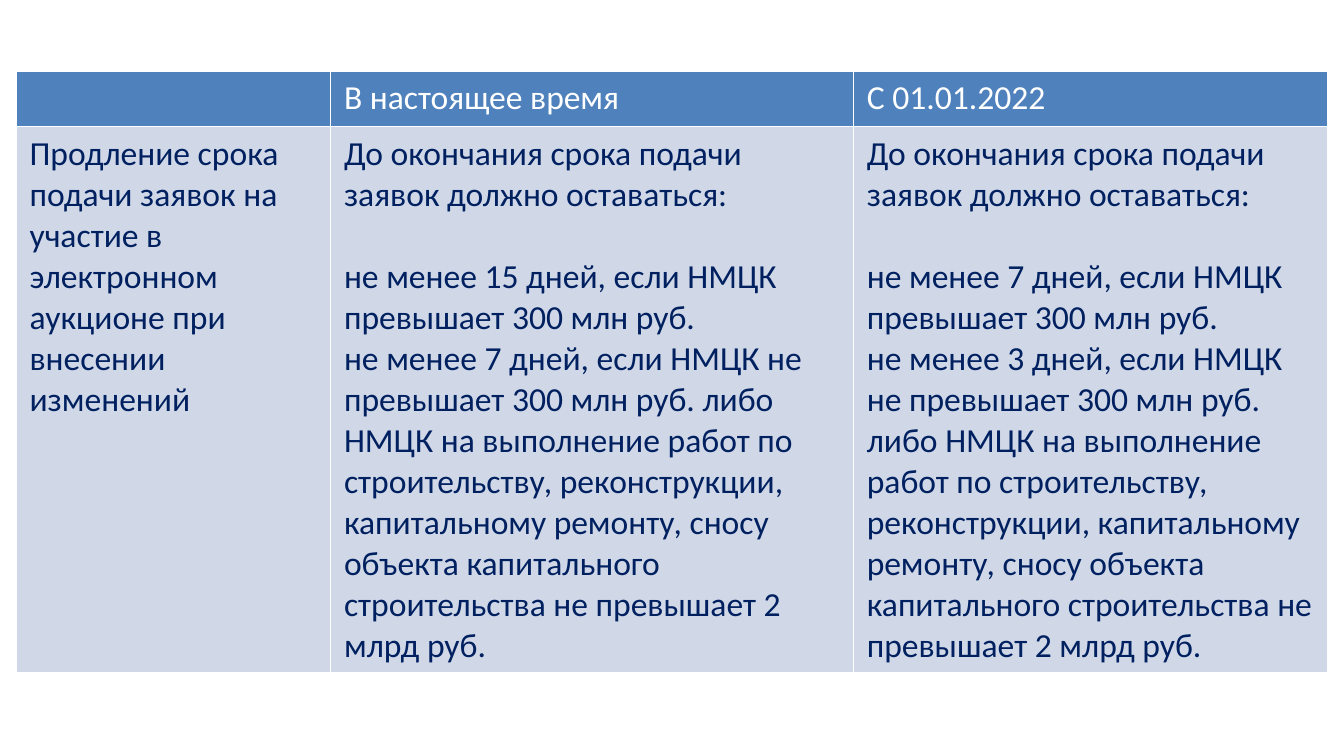
from dataclasses import dataclass

from lxml import etree
from pptx import Presentation
from pptx.dml.color import RGBColor
from pptx.oxml.ns import qn
from pptx.util import Inches, Pt


@dataclass(frozen=True)
class Theme:
    font: str = "Calibri"
    size: int = 18
    line_height: int = 22
    border_width: int = 1
    header_fill: str = "4F81BD"
    header_text: str = "FFFFFF"
    body_fill: str = "D0D8E8"
    body_text: str = "002060"
    border: str = "FFFFFF"


THEME = Theme()
COLUMN_WIDTHS = (2.34, 3.89, 3.53)
ROW_HEIGHTS = (0.41, 4)


def deadline_rules(large_days, small_days):
    """Text of a deadline cell for the two price thresholds."""
    return "\n".join((
        "До окончания срока подачи заявок должно оставаться:",
        f"не менее {large_days} дней, если НМЦК превышает 300 млн руб.",
        f"не менее {small_days} дней, если НМЦК не превышает 300 млн руб. либо "
        "НМЦК на выполнение работ по строительству, реконструкции, "
        "капитальному ремонту, сносу объекта капитального строительства "
        "не превышает 2 млрд руб.",
    ))


def add_borders(cell):
    properties = cell._tc.get_or_add_tcPr()
    for side in ("lnL", "lnR", "lnT", "lnB"):
        line = etree.SubElement(properties, qn(f"a:{side}"), w=str(Pt(THEME.border_width)))
        fill = etree.SubElement(line, qn("a:solidFill"))
        etree.SubElement(fill, qn("a:srgbClr"), val=THEME.border)


rows = (
    ("", "В настоящее время", "С 01.01.2022"),
    (
        "Продление срока подачи заявок на участие в электронном аукционе "
        "при внесении изменений",
        deadline_rules(15, 7),
        deadline_rules(7, 3),
    ),
)
row_colors = (
    (THEME.header_fill, THEME.header_text),
    (THEME.body_fill, THEME.body_text),
)

presentation = Presentation()
presentation.slide_width = Inches(10)
presentation.slide_height = Inches(10 * 9 / 16)
slide = presentation.slides.add_slide(presentation.slide_layouts[6])

comparison = slide.shapes.add_table(
    len(rows), len(COLUMN_WIDTHS), Inches(0.12), Inches(0.53),
    Inches(sum(COLUMN_WIDTHS)), Inches(sum(ROW_HEIGHTS)),
).table
for column, width in zip(comparison.columns, COLUMN_WIDTHS):
    column.width = Inches(width)
for row, height in zip(comparison.rows, ROW_HEIGHTS):
    row.height = Inches(height)

for row, texts, (fill_color, text_color) in zip(comparison.rows, rows, row_colors):
    for cell, text in zip(row.cells, texts):
        add_borders(cell)
        cell.fill.solid()
        cell.fill.fore_color.rgb = RGBColor.from_string(fill_color)
        cell.text_frame.text = text
        for number, paragraph in enumerate(cell.text_frame.paragraphs):
            if number == 1:
                paragraph.space_before = Pt(THEME.line_height)
            for run in paragraph.runs:
                run.font.name = THEME.font
                run.font.size = Pt(THEME.size)
                run.font.bold = False
                run.font.color.rgb = RGBColor.from_string(text_color)

presentation.save("out.pptx")
